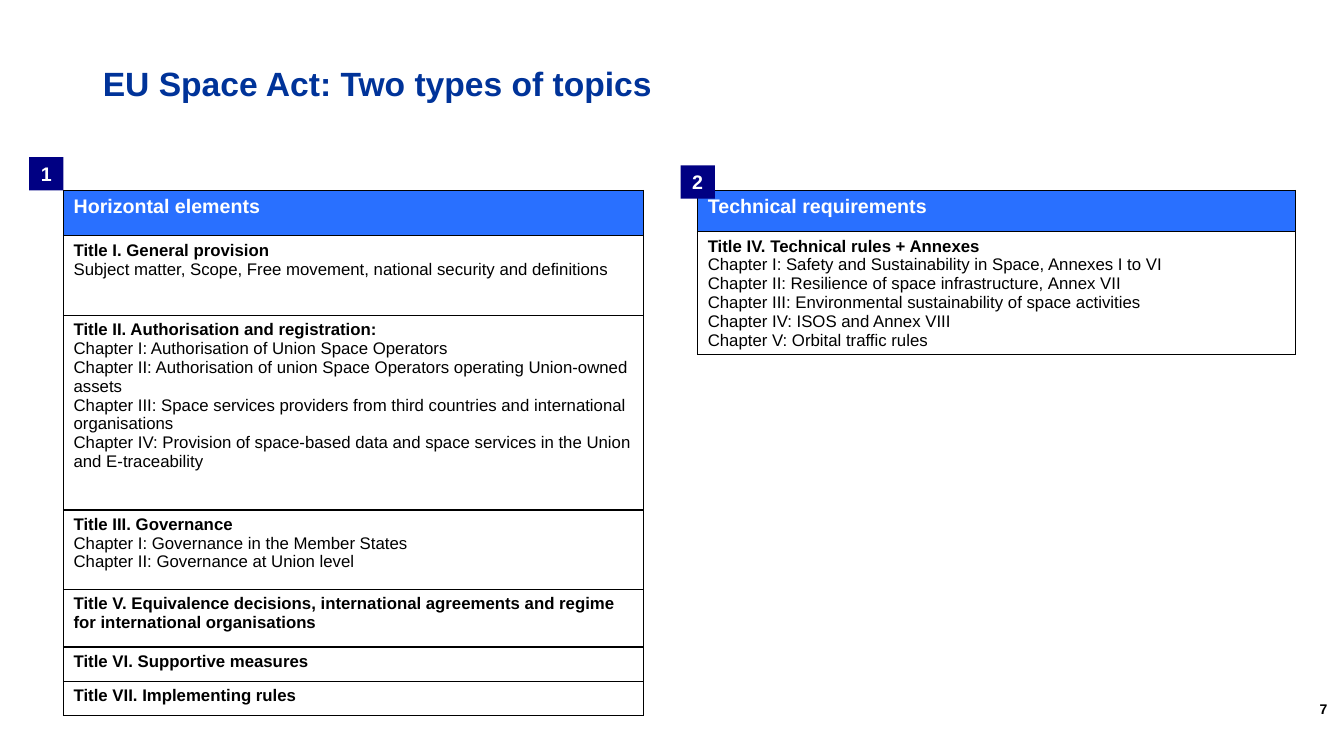
from lxml.etree import SubElement
from pptx import Presentation
from pptx.dml.color import RGBColor
from pptx.enum.shapes import MSO_SHAPE
from pptx.enum.text import MSO_ANCHOR, PP_ALIGN
from pptx.oxml.ns import qn
from pptx.util import Inches, Pt

COLORS = {
    "title": "003399",
    "header": "2970FF",
    "badge": "000083",
    "white": "FFFFFF",
    "black": "000000",
}

HORIZONTAL = [
    (0.45, ["Horizontal elements"]),
    (0.79, ["Title I. General provision",
            "Subject matter, Scope, Free movement, national security and definitions"]),
    (1.93, ["Title II. Authorisation and registration:",
            "Chapter I: Authorisation of Union Space Operators",
            "Chapter II: Authorisation of union Space Operators operating Union-owned assets",
            "Chapter III: Space services providers from third countries and international organisations",
            "Chapter IV: Provision of space-based data and space services in the Union and E-traceability"]),
    (0.79, ["Title III. Governance",
            "Chapter I: Governance in the Member States",
            "Chapter II: Governance at Union level"]),
    (0.57, ["Title V. Equivalence decisions, international agreements and regime for international organisations"]),
    (0.34, ["Title VI. Supportive measures"]),
    (0.34, ["Title VII. Implementing rules"]),
]

TECHNICAL = [
    (0.41, ["Technical requirements"]),
    (1.22, ["Title IV. Technical rules + Annexes",
            "Chapter I: Safety and Sustainability in Space, Annexes I to VI",
            "Chapter II: Resilience of space infrastructure,\u00a0Annex VII",
            "Chapter III: Environmental sustainability of space activities",
            "Chapter IV: ISOS and Annex VIII",
            "Chapter V: Orbital traffic rules"]),
]


def rgb(name):
    return RGBColor.from_string(COLORS[name])


def style(p, size, color, bold=True):
    p.font.name = "Arial"
    p.font.size = Pt(size)
    p.font.bold = bold
    p.font.color.rgb = rgb(color)


def add_borders(cell):
    tc_pr = cell._tc.get_or_add_tcPr()
    for side in ("a:lnL", "a:lnR", "a:lnT", "a:lnB"):
        ln = SubElement(tc_pr, qn(side), w=str(Pt(1)))
        fill = SubElement(ln, qn("a:solidFill"))
        SubElement(fill, qn("a:srgbClr"), val=COLORS["black"])


def add_title(s, left, top, width, height):
    title = s.shapes.title
    title.left, title.top = Inches(left), Inches(top)
    title.width, title.height = Inches(width), Inches(height)
    tf = title.text_frame
    tf.text = "EU Space Act: Two types of topics"
    tf.vertical_anchor = MSO_ANCHOR.MIDDLE
    p = tf.paragraphs[0]
    p.alignment = PP_ALIGN.LEFT
    p.line_spacing = 0.9
    style(p, 24, "title")


def add_topics(s, left, top, width, rows):
    height = sum(h for h, lines in rows)
    table = s.shapes.add_table(len(rows), 1, Inches(left), Inches(top),
                               Inches(width), Inches(height)).table
    for i, (row_height, lines) in enumerate(rows):
        table.rows[i].height = Inches(row_height)
        cell = table.cell(i, 0)
        add_borders(cell)
        cell.fill.solid()
        cell.fill.fore_color.rgb = rgb("white" if i else "header")
        cell.text = "\n".join(lines)
        for j, p in enumerate(cell.text_frame.paragraphs):
            if i == 0:
                style(p, 14, "white")
            else:
                style(p, 12, "black", bold=j == 0)


def add_badge(s, left, top, number):
    sp = s.shapes.add_shape(MSO_SHAPE.RECTANGLE, Inches(left), Inches(top),
                            Inches(0.34), Inches(0.33))
    sp.shadow.inherit = False
    sp.fill.solid()
    sp.fill.fore_color.rgb = rgb("badge")
    sp.line.fill.background()
    tf = sp.text_frame
    tf.text = number
    tf.vertical_anchor = MSO_ANCHOR.MIDDLE
    p = tf.paragraphs[0]
    p.alignment = PP_ALIGN.CENTER
    style(p, 14, "white")


def add_page_number(s, left, top, width, height):
    tf = s.shapes.add_textbox(Inches(left), Inches(top),
                              Inches(width), Inches(height)).text_frame
    tf.word_wrap = True
    tf.text = "7"
    style(tf.paragraphs[0], 10, "black")


def main():
    prs = Presentation()
    prs.slide_width, prs.slide_height = Inches(13.33), Inches(7.5)
    s = prs.slides.add_slide(prs.slide_layouts[5])
    add_title(s, 0.92, 0.4, 11.5, 0.89)
    add_topics(s, 0.63, 1.89, 5.75, HORIZONTAL)
    add_topics(s, 6.92, 1.89, 5.93, TECHNICAL)
    add_badge(s, 0.29, 1.56, "1")
    add_badge(s, 6.75, 1.64, "2")
    add_page_number(s, 12.99, 6.9, 0.46, 0.4)
    prs.save("out.pptx")


if __name__ == "__main__":
    main()
